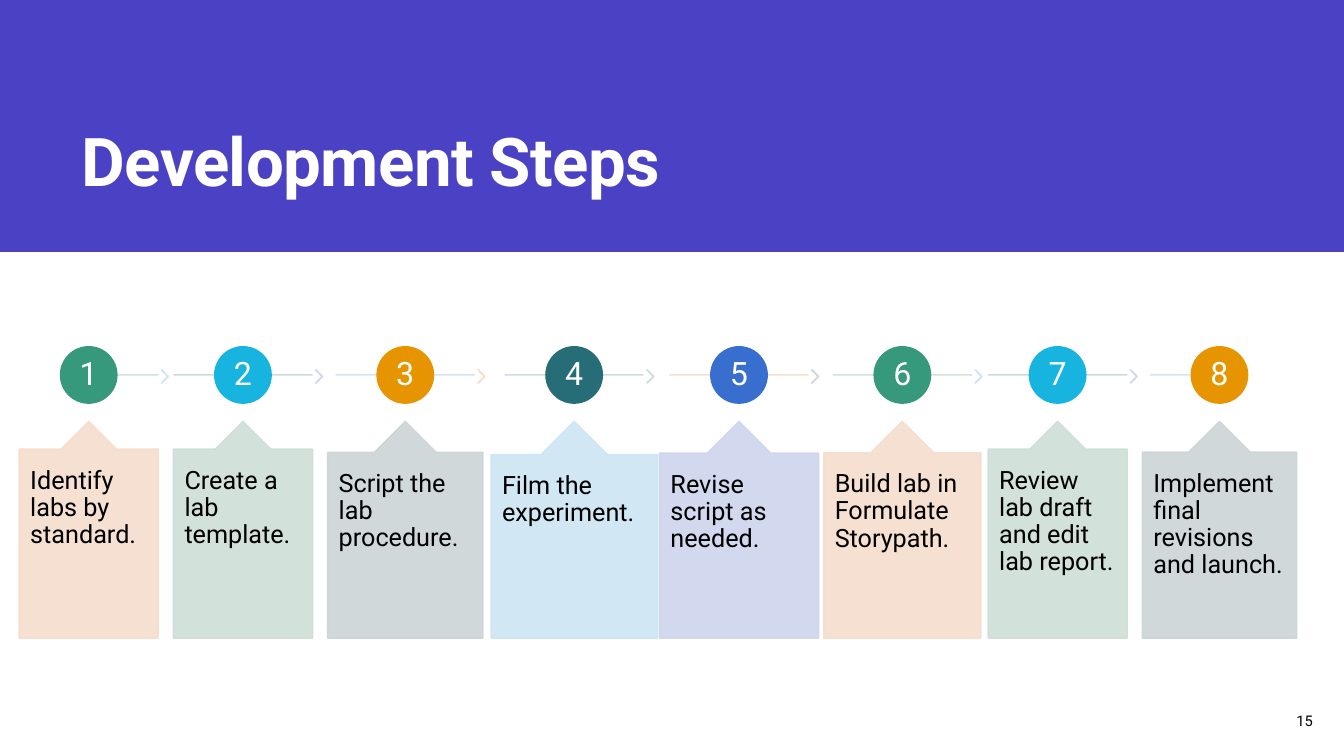
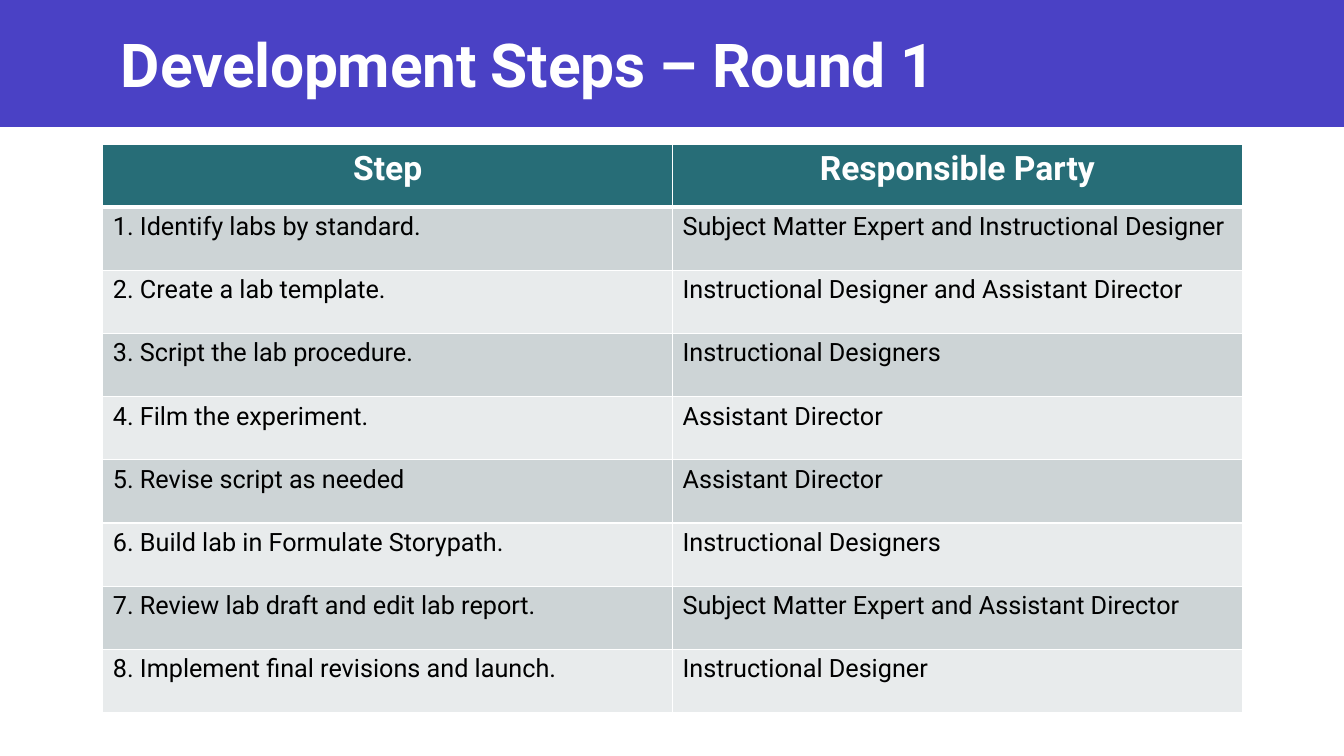
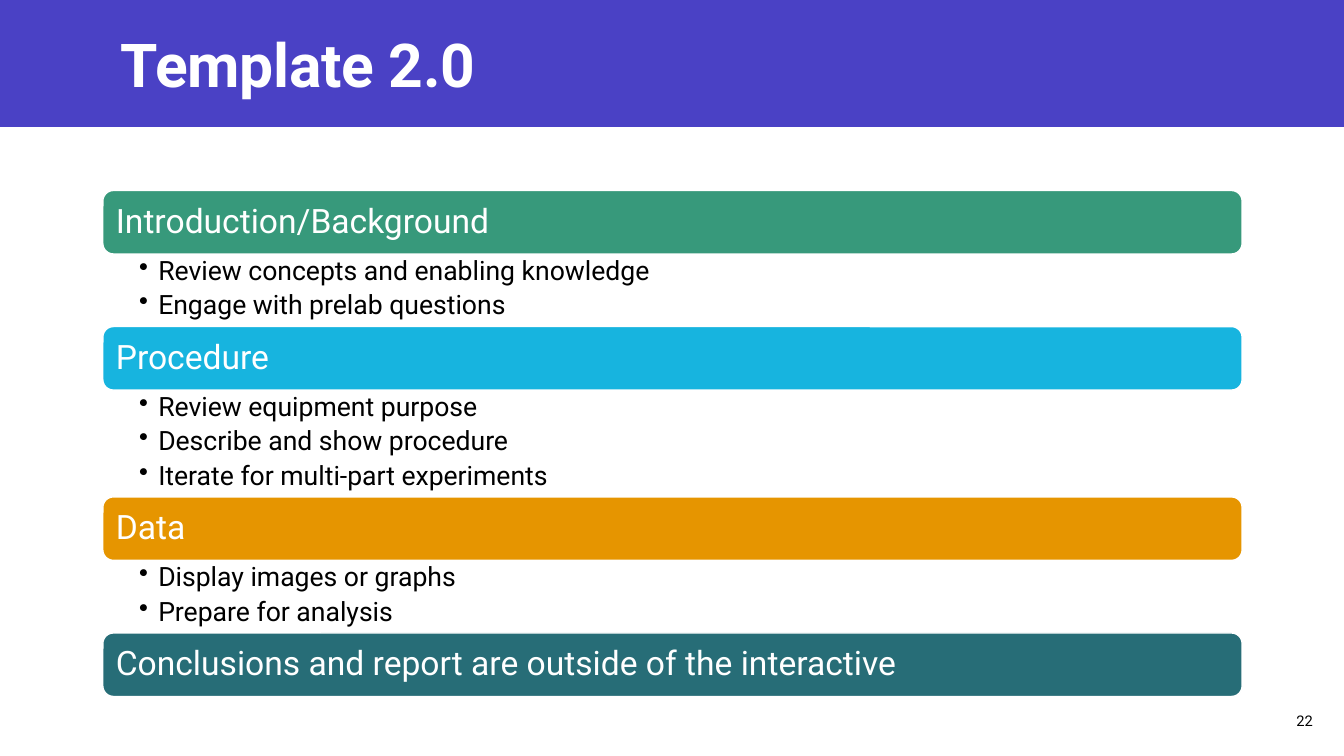
import pptx
import pptx.dml.color
import pptx.enum.shapes
import pptx.enum.text
import pptx.oxml
import pptx.oxml.ns
import pptx.util
from lxml import etree

Inches = pptx.util.Inches
Pt = pptx.util.Pt
SHAPE = pptx.enum.shapes.MSO_SHAPE
ALIGN = pptx.enum.text.PP_ALIGN
ANCHOR = pptx.enum.text.MSO_ANCHOR
qn = pptx.oxml.ns.qn

FONT = "Roboto"
SLIDE_WIDTH, SLIDE_HEIGHT = 13.33, 7.5
COLORS = {
    "band": "4A41C5", "white": "FFFFFF", "black": "000000",
    "green": "37997B", "cyan": "17B4DF", "orange": "E69500", "teal": "276D77", "blue": "386ECE",
    "peach": "F5DDCC", "sage": "CEDED7", "gray": "CDD4D6", "sky": "CCE5F3", "lilac": "CED5ED",
    "pale": "E8EBEC",
}
ACCENTS = ["green", "cyan", "orange", "teal", "blue"]
TINTS = ["peach", "sage", "gray", "sky", "lilac"]

# left edge and width of each callout, with its text
STEPS = [
    (0.19, 1.38, "Identify labs by standard."),
    (1.72, 1.38, "Create a lab template."),
    (3.25, 1.54, "Script the lab procedure."),
    (4.87, 1.65, "Film the experiment."),
    (6.54, 1.58, "Revise script as needed."),
    (8.17, 1.56, "Build lab in Formulate Storypath."),
    (9.80, 1.38, "Review lab draft and edit lab report."),
    (11.33, 1.53, "Implement final revisions and launch."),
]
RESPONSIBILITIES = [
    ("Step", "Responsible Party"),
    ("1. Identify labs by standard.", "Subject Matter Expert and Instructional Designer"),
    ("2. Create a lab template.", "Instructional Designer and Assistant Director"),
    ("3. Script the lab procedure.", "Instructional Designers"),
    ("4. Film the experiment.", "Assistant Director"),
    ("5. Revise script as needed", "Assistant Director"),
    ("6. Build lab in Formulate Storypath.", "Instructional Designers"),
    ("7. Review lab draft and edit lab report.", "Subject Matter Expert and Assistant Director"),
    ("8. Implement final revisions and launch.", "Instructional Designer"),
]
SECTIONS = [
    ("Introduction/Background",
     ["Review concepts and enabling knowledge", "Engage with prelab questions"]),
    ("Procedure",
     ["Review equipment purpose", "Describe and show procedure",
      "Iterate for multi-part experiments"]),
    ("Data", ["Display images or graphs", "Prepare for analysis"]),
    ("Conclusions and report are outside of the interactive", []),
]


def rgb(name):
    return pptx.dml.color.RGBColor.from_string(COLORS[name])


def format_paragraph(paragraph, size, color, align=ALIGN.LEFT, bold=False, line_spacing=None):
    paragraph.alignment = align
    if line_spacing:
        paragraph.line_spacing = line_spacing
    for run in paragraph.runs:
        run.font.name = FONT
        run.font.size = Pt(size)
        run.font.bold = bold
        run.font.color.rgb = rgb(color)


def set_frame(text_frame, anchor, margins=(0.1, 0.05, 0.1, 0.05)):
    """Margins run left, top, right, bottom."""
    text_frame.word_wrap = True
    text_frame.auto_size = pptx.enum.text.MSO_AUTO_SIZE.NONE
    text_frame.vertical_anchor = anchor
    left, top, right, bottom = (Inches(margin) for margin in margins)
    text_frame.margin_left, text_frame.margin_right = left, right
    text_frame.margin_top, text_frame.margin_bottom = top, bottom


def set_opacity(shape, percent):
    for color in shape.element.spPr.iter(qn("a:srgbClr")):
        etree.SubElement(color, qn("a:alpha")).set("val", str(percent * 1000))


def add_box(slide, kind, left, top, width, height, fill, line=None):
    shape = slide.shapes.add_shape(kind, Inches(left), Inches(top), Inches(width), Inches(height))
    shape.shadow.inherit = False
    shape.fill.solid()
    shape.fill.fore_color.rgb = rgb(fill)
    shape.line.color.rgb = rgb(line or fill)
    shape.line.width = Pt(1)
    return shape


def add_line(slide, start, end, y, color):
    connector = slide.shapes.add_connector(
        pptx.enum.shapes.MSO_CONNECTOR.STRAIGHT, Inches(start), Inches(y), Inches(end), Inches(y))
    connector.line.color.rgb = rgb(color)
    connector.line.width = Pt(1)
    etree.SubElement(connector.element.spPr, qn("a:effectLst"))
    return connector


def add_titled_slide(presentation, title, box=(1.1, 0.21, 10.3, 0.84), band_height=1.26,
                     size=43.2, anchor=ANCHOR.MIDDLE, line_spacing=None, tracking=-20):
    slide = presentation.slides.add_slide(presentation.slide_layouts[5])
    band = add_box(slide, SHAPE.RECTANGLE, 0, 0, SLIDE_WIDTH, band_height, "band")
    band.line.fill.background()
    heading = slide.shapes.title
    heading.element.addprevious(band.element)
    heading.left, heading.top, heading.width, heading.height = (Inches(value) for value in box)
    heading.text_frame.text = title
    set_frame(heading.text_frame, anchor)
    paragraph = heading.text_frame.paragraphs[0]
    format_paragraph(paragraph, size, "white", bold=True, line_spacing=line_spacing)
    paragraph.runs[0].font._element.set("spc", str(tracking))
    return slide


def add_page_number(slide, number):
    box = slide.shapes.add_textbox(Inches(12.43), Inches(6.95), Inches(0.69), Inches(0.4))
    box.text_frame.text = str(number)
    set_frame(box.text_frame, ANCHOR.MIDDLE)
    format_paragraph(box.text_frame.paragraphs[0], 10.5, "black", ALIGN.RIGHT)


def add_step(slide, index, left, top, width, text):
    """Place a numbered circle on its track, above a callout."""
    center = left + width / 2
    diameter, reach = 0.56, 0.69
    track = top + diameter / 2
    first, last = index == 0, index == len(STEPS) - 1
    tint, track_tint, arrow_tint = (TINTS[(index + shift) % len(TINTS)] for shift in (0, 1, 3))

    line = add_line(slide, center if first else center - reach,
                    center if last else center + reach, track, track_tint)
    set_opacity(line, 90)
    if not last:
        arrow = add_box(slide, SHAPE.CHEVRON, center + 0.72, track - 0.05, 0.07, 0.13, arrow_tint)
        arrow.adjustments[0] = 0.9
        set_opacity(arrow, 90)

    circle = add_box(slide, SHAPE.OVAL, center - diameter / 2, top, diameter, diameter,
                     ACCENTS[index % len(ACCENTS)])
    circle.text_frame.text = str(index + 1)
    set_frame(circle.text_frame, ANCHOR.MIDDLE, (0.02,) * 4)
    format_paragraph(circle.text_frame.paragraphs[0], 23, "white", ALIGN.CENTER, line_spacing=0.9)

    callout = add_box(slide, SHAPE.UP_ARROW_CALLOUT, left, top + 0.74, width, 2.15, tint)
    for position, value in enumerate((0.5, 0.2, 0.2, 1)):
        callout.adjustments[position] = value
    set_opacity(callout, 90)
    callout.text_frame.text = text
    set_frame(callout.text_frame, ANCHOR.TOP, (0.11, 0.18, 0.11, 0.18))
    format_paragraph(callout.text_frame.paragraphs[0], 18, "black", line_spacing=0.9)


def set_borders(cell, widths):
    """Draw white borders; widths maps lnL, lnR, lnT and lnB to points."""
    properties = cell._tc.get_or_add_tcPr()
    for position, (side, width) in enumerate(widths.items()):
        border = pptx.oxml.parse_xml(
            f'<a:{side} {pptx.oxml.ns.nsdecls("a")} w="{Pt(width)}"><a:solidFill>'
            f'<a:srgbClr val="{COLORS["white"]}"/></a:solidFill></a:{side}>')
        properties.insert(position, border)


def add_responsibility_table(slide, left, top, width, height):
    rows, columns = len(RESPONSIBILITIES), len(RESPONSIBILITIES[0])
    table = slide.shapes.add_table(rows, columns, Inches(left), Inches(top),
                                   Inches(width), Inches(height)).table
    table.horz_banding = False
    for row, texts in enumerate(RESPONSIBILITIES):
        header = row == 0
        for column, text in enumerate(texts):
            cell = table.cell(row, column)
            cell.text_frame.text = text
            cell.fill.solid()
            cell.fill.fore_color.rgb = rgb("teal" if header else "gray" if row % 2 else "pale")
            set_borders(cell, {"lnL": 1, "lnR": 1, "lnT": 3 if row == 1 else 1,
                               "lnB": 3 if header else 1})
            paragraph = cell.text_frame.paragraphs[0]
            if header:
                format_paragraph(paragraph, 24, "white", ALIGN.CENTER, bold=True)
            else:
                format_paragraph(paragraph, 18, "black")


def add_bullets(slide, items, left, top, width, height):
    box = slide.shapes.add_textbox(Inches(left), Inches(top), Inches(width), Inches(height))
    box.text_frame.text = "\n".join(items)
    set_frame(box.text_frame, ANCHOR.TOP, (0.36, 0.03, 0.19, 0.03))
    for paragraph in box.text_frame.paragraphs:
        properties = paragraph._p.get_or_add_pPr()
        properties.set("marL", str(Inches(0.19)))
        properties.set("indent", str(-Inches(0.19)))
        etree.SubElement(properties, qn("a:buChar")).set("char", "•")
        paragraph.space_after = Pt(4.3)
        format_paragraph(paragraph, 19, "black", line_spacing=0.9)


def add_sections(slide, left, top, width):
    """Stack coloured bars, each followed by its bullets."""
    bar_height = 0.63
    for (heading, items), accent in zip(SECTIONS, ACCENTS):
        bar = add_box(slide, SHAPE.ROUNDED_RECTANGLE, left, top, width, bar_height, accent, "white")
        bar.text_frame.text = heading
        set_frame(bar.text_frame, ANCHOR.MIDDLE, (0.1,) * 4)
        format_paragraph(bar.text_frame.paragraphs[0], 24, "white", line_spacing=0.9)
        top += bar_height
        if items:
            list_height = 0.04 + 0.34 * len(items)
            add_bullets(slide, items, left, top, width, list_height)
            top += list_height


def build_steps_slide(presentation):
    slide = add_titled_slide(presentation, "Development Steps", (0.71, 0.4, 11.54, 1.64), 2.5,
                             48, ANCHOR.BOTTOM, 0.9, -40)
    for index, (left, width, text) in enumerate(STEPS):
        add_step(slide, index, left, 3.44, width, text)
    add_page_number(slide, 15)


def build_table_slide(presentation):
    slide = add_titled_slide(presentation, "Development Steps – Round 1")
    add_responsibility_table(slide, 1.02, 1.43, 11.3, 5.64)


def build_template_slide(presentation):
    slide = add_titled_slide(presentation, "Template 2.0")
    add_sections(slide, 1.02, 1.89, 11.3)
    add_page_number(slide, 22)


def main():
    presentation = pptx.Presentation()
    presentation.slide_width = Inches(SLIDE_WIDTH)
    presentation.slide_height = Inches(SLIDE_HEIGHT)
    build_steps_slide(presentation)
    build_table_slide(presentation)
    build_template_slide(presentation)
    presentation.save("out.pptx")


if __name__ == "__main__":
    main()
